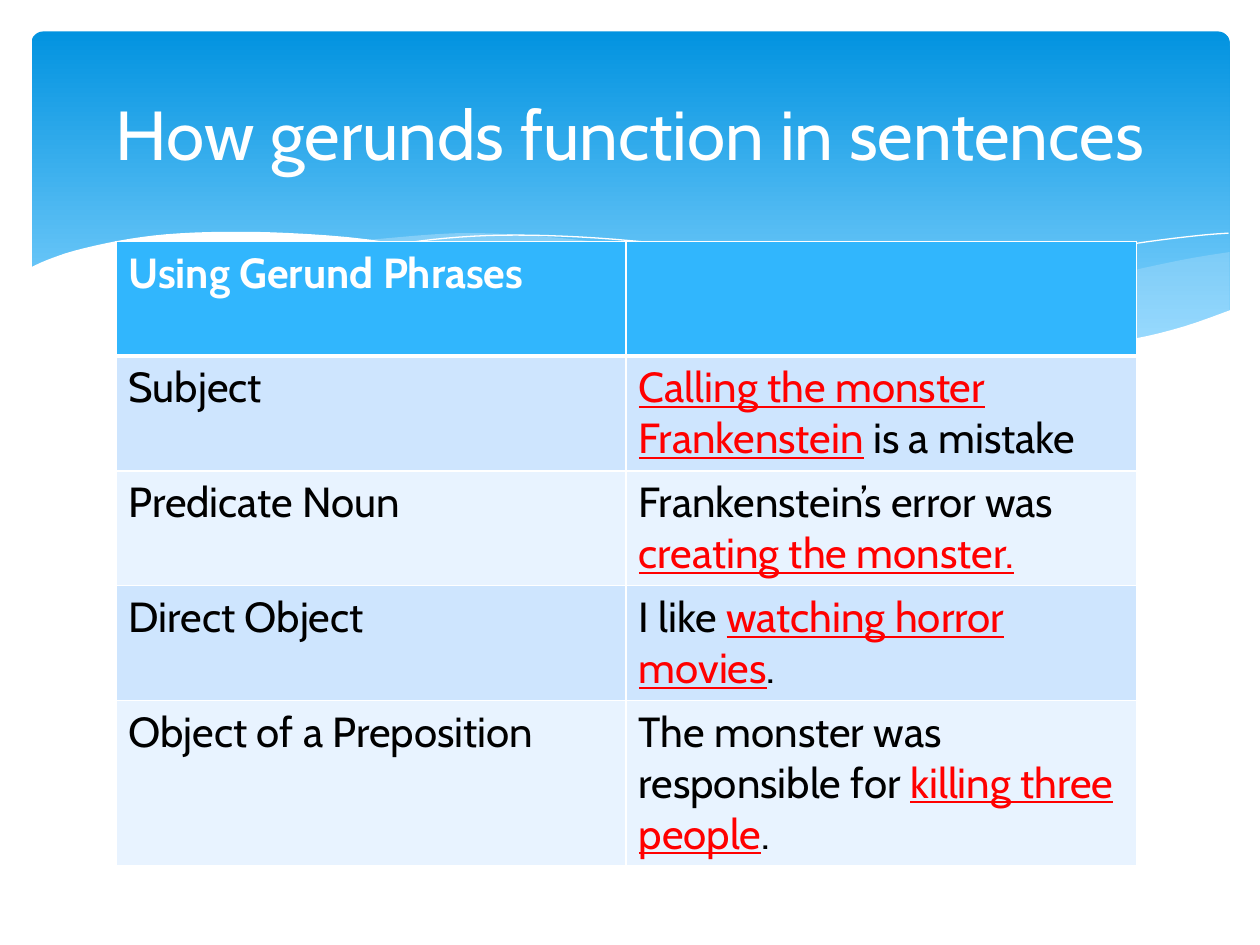
from lxml import etree
from pptx import Presentation
from pptx.dml.color import RGBColor
from pptx.enum.shapes import MSO_SHAPE
from pptx.enum.text import MSO_ANCHOR, PP_ALIGN
from pptx.oxml.ns import qn
from pptx.util import Pt

ROUNDED = MSO_SHAPE.ROUNDED_RECTANGLE
MIDDLE = MSO_ANCHOR.MIDDLE
CENTER = PP_ALIGN.CENTER

WHITE = RGBColor(0xFF, 0xFF, 0xFF)
BLACK = RGBColor(0x00, 0x00, 0x00)
RED = RGBColor(0xFF, 0x00, 0x00)
BANNER_TOP = RGBColor(0x02, 0x93, 0xE0)
BANNER_BOTTOM = RGBColor(0x83, 0xD3, 0xFE)
WAVE = RGBColor(0xC6, 0xE7, 0xFC)
HEADER = RGBColor(0x31, 0xB6, 0xFD)
BANDS = (RGBColor(0xCE, 0xE5, 0xFE), RGBColor(0xE8, 0xF3, 0xFF))
FONT = "Cabin"

TITLE = "How gerunds function in sentences"
HEADING = "Using Gerund Phrases"
# Each example is (before, gerund phrase, after).
EXAMPLES = [
    ("Subject", ("", "Calling the monster Frankenstein", " is a mistake")),
    ("Predicate Noun", ("Frankenstein’s error was ", "creating the monster.", "")),
    ("Direct Object", ("I like ", "watching horror movies", ".")),
    ("Object of a Preposition",
     ("The monster was responsible for ", "killing three people", ".")),
]

RIGHT_WAVE = [
    [(702.7, 144), (673, 149), (620, 160.6), (561, 174.2), (508, 185), (476, 190.8)],
    [(476, 190.8), (507.6, 195.1), (545, 198.7), (578, 200.2), (615, 198.7),
     (646, 194.4), (673, 188.6), (702.7, 177.8)],
]
MIDDLE_WAVE = [
    [(643, 196.6), (602.6, 190.8), (558, 182.9), (508.3, 172.8), (452.9, 159.8),
     (409.7, 149.8), (370, 142.6), (334.8, 137.5), (302.4, 134.6), (273.6, 133.2),
     (247.7, 133.9), (206, 137.5)],
    [(206, 137.5), (246.2, 143.3), (290.9, 151.9), (323.3, 159.8), (381.6, 172.8),
     (432.7, 183.6), (478.8, 191.5), (519.8, 197.3), (556.6, 199.4), (589, 200.2),
     (617, 199.4), (643, 196.6)],
]
FALLING_LINE = [[
    (222.5, 140.4), (247.7, 136.8), (278.6, 134.6), (311.8, 134.6), (352, 136.8),
    (400.3, 141.8), (457.9, 149.8), (500.4, 157.7), (547.2, 167.8), (598.3, 180.7),
    (653, 195.8)]]
RISING_LINE = [[
    (441.4, 185), (483.8, 173.5), (538.6, 160.6), (580.3, 151.2), (623.5, 143.3),
    (655.2, 138.2), (684.7, 134.6), (702, 133.2)]]
FRONT_WAVE = [
    [(703.4, 177.1), (676.8, 186.5), (647.3, 193.7), (612, 198), (582.5, 199.4),
     (535.7, 197.3), (495.4, 193), (450.7, 185.8), (399.6, 176.4), (321.8, 158.4),
     (262.8, 145.4), (210.2, 136.8), (165.6, 133.2), (127.4, 132.5), (95, 133.9),
     (68.4, 137.5), (42.5, 143.3), (25.9, 149), (16.6, 153.4)],
    [(16.6, 236.9), (703.4, 236.9)],
]

TABLE_LEFT, TABLE_TOP = 66.24, 138
COLUMN_WIDTH = 291.6
ROW_HEIGHTS = [65.5, 65.5, 65.5, 65.5, 94.3]


def smooth(points, steps=4):
    if len(points) < 3:
        return points
    padded = [points[0], *points, points[-1]]
    curve = [points[0]]
    for a, b, c, d in zip(padded, padded[1:], padded[2:], padded[3:]):
        for step in range(1, steps + 1):
            t = step / steps
            curve.append(tuple(
                (2 * q + (r - p) * t + (2 * p - 5 * q + 4 * r - s) * t ** 2
                 + (3 * q - p - 3 * r + s) * t ** 3) / 2
                for p, q, r, s in zip(a, b, c, d)))
    return curve


def add_curve(slide, edges, fill=None, opacity=100):
    points = [(Pt(x), Pt(y)) for edge in edges for x, y in smooth(edge)]
    builder = slide.shapes.build_freeform(*points[0])
    builder.add_line_segments(points[1:], close=fill is not None)
    shape = builder.convert_to_shape()
    shape.shadow.inherit = False
    if fill is None:
        shape.fill.background()
        shape.line.color.rgb = WHITE
        shape.line.width = Pt(0)
        return
    shape.fill.solid()
    shape.fill.fore_color.rgb = fill
    shape.line.fill.background()
    if opacity < 100:
        color = shape.fill._xPr.find(qn("a:solidFill"))[0]
        etree.SubElement(color, qn("a:alpha"), val=str(opacity * 1000))


def add_banner(slide):
    banner = slide.shapes.add_shape(ROUNDED, Pt(18), Pt(18), Pt(684.7), Pt(194.4))
    banner.adjustments[0] = 0.034
    banner.shadow.inherit = False
    banner.line.fill.background()
    banner.fill.gradient()
    banner.fill.gradient_angle = 270
    stops = ((0, BANNER_TOP), (0.9, BANNER_BOTTOM))
    for stop, (position, color) in zip(banner.fill.gradient_stops, stops):
        stop.position = position
        stop.color.rgb = color


def add_run(paragraph, text, color, size=24, bold=False, underline=False):
    run = paragraph.add_run()
    run.text = text
    run.font.name = FONT
    run.font.size = Pt(size)
    run.font.color.rgb = color
    run.font.bold = bold
    run.font.underline = underline


def style_cell(cell, fill, bottom_width):
    properties = cell._tc.get_or_add_tcPr()
    for side, width in (("L", 1), ("R", 1), ("T", 1), ("B", bottom_width)):
        border = etree.SubElement(properties, qn(f"a:ln{side}"), w=str(Pt(width)))
        solid = etree.SubElement(border, qn("a:solidFill"))
        etree.SubElement(solid, qn("a:srgbClr"), val=str(WHITE))
    cell.fill.solid()
    cell.fill.fore_color.rgb = fill


def add_examples_table(slide):
    table = slide.shapes.add_table(
        len(ROW_HEIGHTS), 2, Pt(TABLE_LEFT), Pt(TABLE_TOP),
        Pt(2 * COLUMN_WIDTH), Pt(sum(ROW_HEIGHTS))).table
    for column in table.columns:
        column.width = Pt(COLUMN_WIDTH)
    for index, (row, height) in enumerate(zip(table.rows, ROW_HEIGHTS)):
        row.height = Pt(height)
        for cell in row.cells:
            fill = BANDS[(index - 1) % 2] if index else HEADER
            style_cell(cell, fill, 1 if index else 3)
    heading = table.cell(0, 0).text_frame.paragraphs[0]
    add_run(heading, HEADING, WHITE, bold=True)
    for index, (function, (before, gerund, after)) in enumerate(EXAMPLES, 1):
        add_run(table.cell(index, 0).text_frame.paragraphs[0], function, BLACK)
        paragraph = table.cell(index, 1).text_frame.paragraphs[0]
        if before:
            add_run(paragraph, before, BLACK)
        add_run(paragraph, gerund, RED, underline=True)
        if after:
            add_run(paragraph, after, BLACK)


def add_title(slide):
    box = slide.shapes.add_textbox(Pt(36), Pt(26.64), Pt(648), Pt(98.64))
    frame = box.text_frame
    frame.word_wrap = True
    frame.vertical_anchor = MIDDLE
    frame.paragraphs[0].alignment = CENTER
    add_run(frame.paragraphs[0], TITLE, WHITE, size=39.6)


def main():
    presentation = Presentation()
    presentation.slide_width, presentation.slide_height = Pt(720), Pt(540)
    slide = presentation.slides.add_slide(presentation.slide_layouts[6])
    add_banner(slide)
    add_curve(slide, RIGHT_WAVE, WAVE, 29)
    add_curve(slide, MIDDLE_WAVE, WAVE, 40)
    add_curve(slide, FALLING_LINE)
    add_curve(slide, RISING_LINE)
    add_curve(slide, FRONT_WAVE, WHITE)
    add_examples_table(slide)
    add_title(slide)
    presentation.save("out.pptx")


if __name__ == "__main__":
    main()
